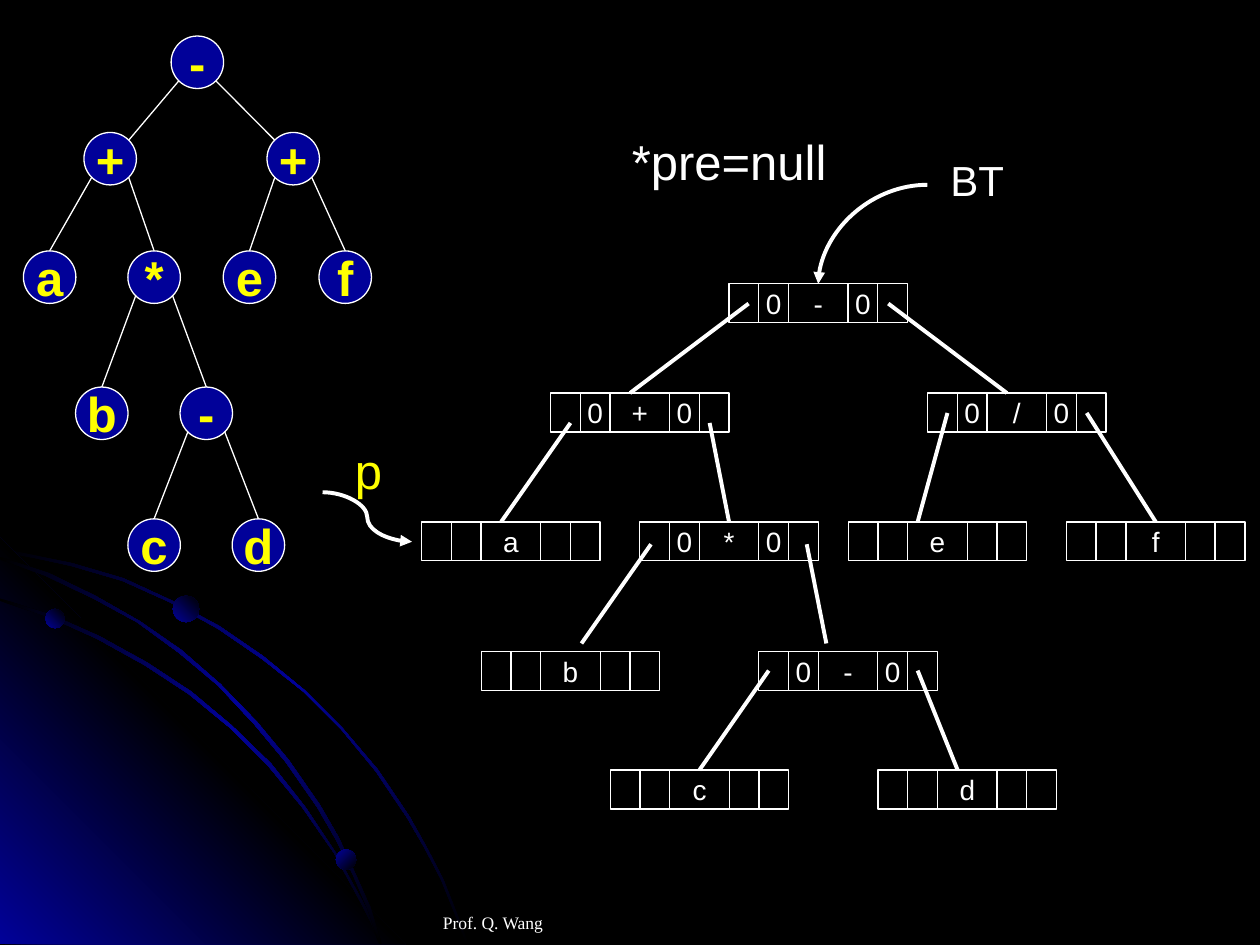
from lxml import etree
from pptx import Presentation
from pptx.dml.color import RGBColor
from pptx.enum.shapes import MSO_CONNECTOR, MSO_SHAPE
from pptx.enum.text import MSO_ANCHOR, PP_ALIGN
from pptx.oxml import parse_xml
from pptx.oxml.ns import nsdecls, qn
from pptx.util import Pt

RECT, OVAL = MSO_SHAPE.RECTANGLE, MSO_SHAPE.OVAL
STRAIGHT, CURVE = MSO_CONNECTOR.STRAIGHT, MSO_CONNECTOR.CURVE
MIDDLE, BOTTOM = MSO_ANCHOR.MIDDLE, MSO_ANCHOR.BOTTOM
LEFT, CENTER = PP_ALIGN.LEFT, PP_ALIGN.CENTER
TOP_SITE = 0

COLORS = {"black": "000000", "blue": "010199", "white": "FFFFFF", "yellow": "FFFF00"}
RGB = {name: RGBColor.from_string(value) for name, value in COLORS.items()}


def write(shape, text, size, color="white", font="Arial", bold=False, align=CENTER):
    frame = shape.text_frame
    frame.word_wrap = False
    frame.text = text
    para = frame.paragraphs[0]
    para.alignment = align
    para.font.name = font
    para.font.size = Pt(size)
    para.font.bold = bold
    para.font.color.rgb = RGB[color]
    return frame


def add_line(shapes, start, end, width, kind=STRAIGHT, arrow=False):
    line = shapes.add_connector(kind, *(Pt(value) for value in start + end))
    line.line.color.rgb = RGB["white"]
    line.line.width = Pt(width)
    properties = line._element.spPr
    if arrow:
        etree.SubElement(properties.find(qn("a:ln")), qn("a:tailEnd"), type="triangle")
    etree.SubElement(properties, qn("a:effectLst"))
    return line


deck = Presentation()
deck.slide_width, deck.slide_height = Pt(720), Pt(540)
page = deck.slides.add_slide(deck.slide_layouts[6])
page.background.fill.solid()
page.background.fill.fore_color.rgb = RGB["black"]

# Corner decoration: a glow, three orbits and three planets
orbit_outer = [
    (41, 321.8), (20.2, 317.5), (0, 313.2), (0, 315.4), (20.2, 319), (40.3, 323.3),
    (69.8, 331.9), (97.2, 344.2), (124.6, 359.3), (149.8, 376.6), (173.5, 395.3),
    (195.1, 416.9), (214.6, 440.6), (232.6, 467.3), (242.6, 484.6), (252, 502.6),
    (259.2, 520.6), (266.4, 539.3), (267.8, 539.3), (260.6, 520.6), (253.4, 502.6),
    (244.1, 484.6), (234, 466.6), (216, 439.9), (195.8, 416.2), (174.2, 394.6),
    (150.5, 375.1), (125.3, 357.8), (98.6, 343.4), (70.6, 330.5)]
orbit_inner = [
    (205.2, 514.1), (211.7, 527), (216.7, 539.3), (218.2, 539.3), (213.1, 525.6),
    (205.9, 512.6), (191.5, 486.7), (174.2, 460.8), (154.8, 436.3), (132.5, 414.7),
    (109.4, 395.3), (84.2, 378.7), (56.9, 363.6), (29.5, 351.4), (0, 342), (0, 343.4),
    (28.1, 352.8), (55.4, 365), (82.8, 380.2), (108, 396.7), (131.8, 416.2),
    (153.4, 437.8), (172.8, 461.5), (190.8, 487.4)]
orbit_middle = [
    (0, 318.2), (0, 319.7), (25.9, 329), (53.3, 342), (78.5, 355.7), (102.2, 373),
    (124.6, 391.7), (145.4, 414), (163.4, 435.6), (181.4, 461.5), (192.2, 480.2),
    (201.6, 499.7), (210.2, 519.8), (216.7, 539.3), (218.2, 539.3), (211.7, 518.4),
    (203, 499), (193.7, 478.8), (182.9, 460.1), (164.9, 434.2), (146.9, 412.6),
    (126, 391), (103.7, 371.5), (79.9, 355), (54.7, 340.6), (28.1, 327.6)]
glow = [(231.8, 539.5), (0, 539.5), (0, 307.4)]

decoration = page.shapes.add_group_shape().shapes
shaded = []
for outline, stops, angle in [
    (orbit_outer, ["black", "blue", "black"], 45),
    (glow, ["blue", "black", "blue"], 315),
    (orbit_inner, ["black", "blue", "black"], 45),
    (orbit_middle, ["black", "blue", "black"], 45),
]:
    points = [(Pt(x), Pt(y)) for x, y in outline]
    builder = decoration.build_freeform(*points[0])
    builder.add_line_segments(points[1:], close=True)
    shaded.append((builder.convert_to_shape(), stops, angle))
for x, y, size, angle in [(26, 348, 11, 315), (192, 485.5, 11.5, 45), (98.8, 340.5, 15, 315)]:
    planet = decoration.add_shape(OVAL, Pt(x), Pt(y), Pt(size), Pt(size))
    shaded.append((planet, ["blue", "black"], angle))

for shape, stops, angle in shaded:
    shape.shadow.inherit = False
    shape.line.fill.background()
    shape.fill.background()
    step = 100000 // (len(stops) - 1)
    stop_xml = "".join(
        f'<a:gs pos="{i * step}"><a:srgbClr val="{COLORS[name]}"/></a:gs>'
        for i, name in enumerate(stops))
    gradient = parse_xml(
        f'<a:gradFill {nsdecls("a")} rotWithShape="1"><a:gsLst>{stop_xml}</a:gsLst>'
        f'<a:lin ang="{angle * 60000}" scaled="1"/></a:gradFill>')
    properties = shape._element.spPr
    properties.replace(properties.find(qn("a:noFill")), gradient)

# Footer
footer = page.shapes.add_textbox(Pt(246), Pt(497), Pt(228), Pt(36))
frame = write(footer, "Prof. Q. Wang", 10, font="Times New Roman", align=LEFT)
frame.word_wrap = True
frame.vertical_anchor = BOTTOM
frame.margin_bottom = Pt(0)

# Threaded tree records: left link, left tag, data, right tag, right link
CELL_UNIT, CELL_HEIGHT = 17, 22.3
data_cells = {}
for key, data, tag, left, top in [
    ("root", "-", "0", 416.6, 162.2), ("plus", "+", "0", 314.6, 224.6),
    ("divide", "/", "0", 530, 224.6), ("times", "*", "0", 365.6, 298.2),
    ("minus", "-", "0", 433.6, 372.2), ("a", "a", "", 240.9, 298.2),
    ("b", "b", "", 275, 372.2), ("c", "c", "", 348.7, 440),
    ("d", "d", "", 501.8, 440), ("e", "e", "", 484.7, 298.2),
    ("f", "f", "", 609.4, 298.2),
]:
    x = left
    for column, text in enumerate(["", tag, data, tag, ""]):
        width = CELL_UNIT * (2 if column == 2 else 1)
        cell = page.shapes.add_shape(RECT, Pt(x), Pt(top), Pt(width), Pt(CELL_HEIGHT))
        cell.shadow.inherit = False
        cell.fill.background()
        cell.line.color.rgb = RGB["white"]
        cell.line.width = Pt(0.75)
        if text:
            write(cell, text, 16).vertical_anchor = MIDDLE
        if column == 2:
            data_cells[key] = cell
        x += width

# Pointer from BT to the root record
pointer = add_line(page.shapes, (530, 105.6), (467.6, 162.2), 2.25, CURVE, arrow=True)
pointer._element.spPr.find(qn("a:prstGeom")).set("prst", "curvedConnector2")
pointer.end_connect(data_cells["root"], TOP_SITE)

# Child links, joined where they meet the middle of a data cell
for start, end, joined in [
    ((427.8, 173.5), (360, 224.6), None), ((507.6, 173.5), (575.4, 224.6), None),
    ((326, 241.7), (286.4, 298.2), None), ((405.5, 241.7), (416.6, 298.2), "times"),
    ((541.4, 236), (524.4, 298.2), None), ((621, 236), (660.4, 298.2), "f"),
    ((372, 311), (332.3, 367.7), None), ((461, 311), (472.2, 367.7), None),
    ((439.3, 383.2), (399.7, 440), "c"), ((524.4, 383.2), (547.2, 440), None),
]:
    link = add_line(page.shapes, start, end, 2.25)
    if joined:
        link.end_connect(data_cells[joined], TOP_SITE)

# Expression tree, placed by circle centres
DIAMETER = 30
RADIUS, DIAGONAL = DIAMETER / 2, 10.5
centers = {
    "root": (112.8, 35.6), "plus": (63, 90.7), "a": (28.4, 158.4), "times": (88.1, 158.4),
    "b": (58.2, 236.2), "minus": (117.9, 236.2), "c": (88.1, 311.5), "d": (147.7, 311.5),
    "divide": (167.6, 90.7), "e": (142.6, 158.4), "f": (197.3, 158.4)}
symbols = {"root": "-", "plus": "+", "times": "*", "minus": "-", "divide": "+"}
expression = page.shapes.add_group_shape().shapes
circles = {}
for key, (x, y) in centers.items():
    circle = expression.add_shape(
        OVAL, Pt(x - RADIUS), Pt(y - RADIUS), Pt(DIAMETER), Pt(DIAMETER))
    circle.shadow.inherit = False
    circle.fill.solid()
    circle.fill.fore_color.rgb = RGB["blue"]
    circle.line.color.rgb = RGB["white"]
    circle.line.width = Pt(0.75)
    write(circle, symbols.get(key, key), 28, "yellow", bold=True).vertical_anchor = MIDDLE
    circles[key] = circle

for parent, children in [
    ("root", ("plus", "divide")), ("plus", ("a", "times")), ("divide", ("e", "f")),
    ("times", ("b", "minus")), ("minus", ("c", "d")),
]:
    x, y = centers[parent]
    for side, child in zip((-1, 1), children):
        child_x, child_y = centers[child]
        start = (x + side * DIAGONAL, y + DIAGONAL)
        if parent == "root":
            end = (child_x - side * DIAGONAL, child_y - DIAGONAL)
            add_line(expression, start, end, 0.75)
        else:
            branch = add_line(expression, start, (child_x, child_y - RADIUS), 0.75)
            branch.end_connect(circles[child], TOP_SITE)

# Pointer p and the labels
add_line(page.shapes, (184.3, 281.3), (235.4, 309.6), 2.25, CURVE, arrow=True)
for text, size, color, left, top, width, height in [
    ("p", 28, "yellow", 195.8, 248, 30, 41),
    ("BT", 24, "white", 536, 84.5, 45, 36),
    ("*pre=null", 28, "white", 354, 71.5, 126, 41),
]:
    label = page.shapes.add_textbox(Pt(left), Pt(top), Pt(width), Pt(height))
    write(label, text, size, color, align=LEFT)

deck.save("out.pptx")
